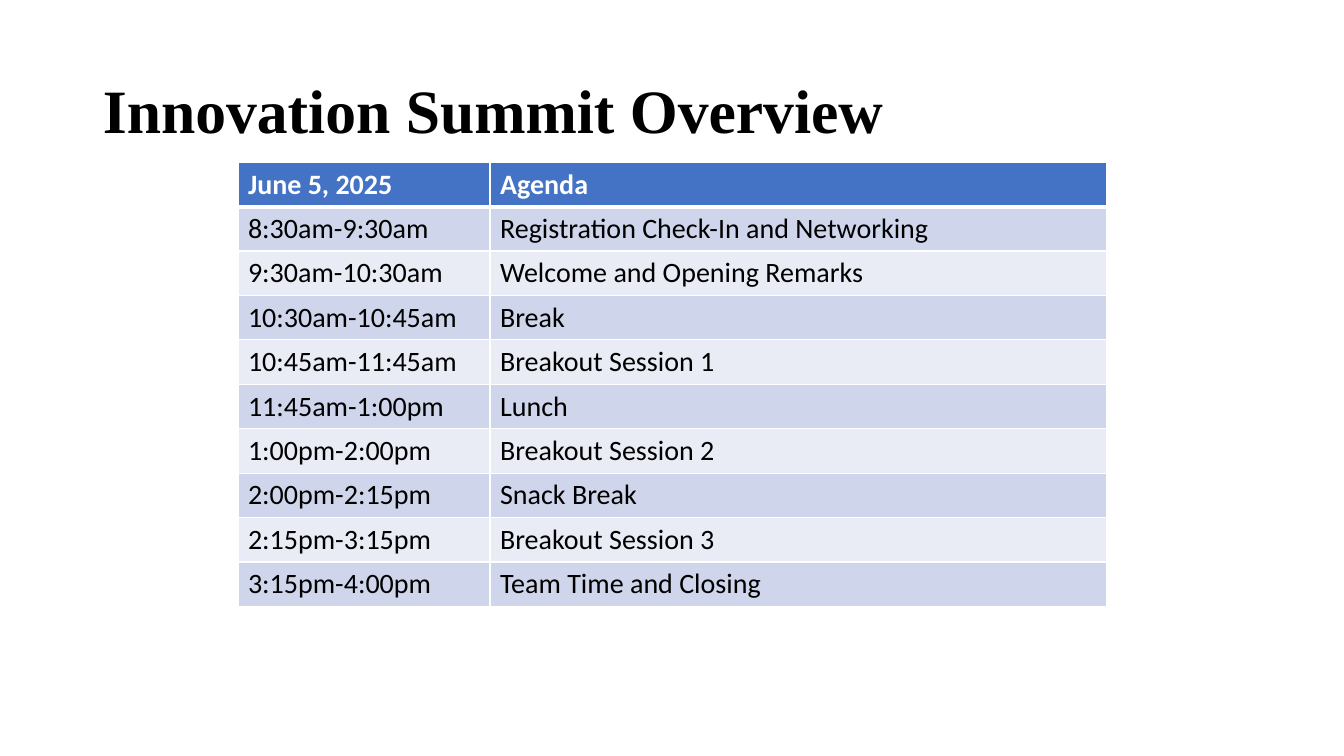
from dataclasses import dataclass

from lxml.etree import SubElement as Sub
from pptx import Presentation
from pptx.dml.color import RGBColor as Rgb
from pptx.enum.text import MSO_ANCHOR as Anchor, MSO_AUTO_SIZE as Fit, PP_ALIGN as Align
from pptx.oxml.ns import qn
from pptx.util import Inches, Pt

TITLE = "Innovation Summit Overview"
HEAD = ("June 5, 2025", "Agenda")
AGENDA = [
    ("8:30am-9:30am", "Registration Check-In and Networking"),
    ("9:30am-10:30am", "Welcome and Opening Remarks"),
    ("10:30am-10:45am", "Break"),
    ("10:45am-11:45am", "Breakout Session 1"),
    ("11:45am-1:00pm", "Lunch"),
    ("1:00pm-2:00pm", "Breakout Session 2"),
    ("2:00pm-2:15pm", "Snack Break"),
    ("2:15pm-3:15pm", "Breakout Session 3"),
    ("3:15pm-4:00pm", "Team Time and Closing"),
]
SIZE = (13.33, 7.5)
BOX = (0.92, 0.4, 11.5, 1.45)
LEFT, TOP = 2.36, 1.61
COLS = (2.5, 6.12)
ROW = 0.44


@dataclass(frozen=True)
class Theme:
    serif: str = "Times New Roman"
    sans: str = "Calibri"
    title: int = 44
    body: int = 20
    ink: str = "000000"
    white: str = "FFFFFF"
    head: str = "4472C4"
    bands: tuple = ("CFD5EA", "E9EBF5")
    thin: int = 1
    thick: int = 3


LOOK = Theme()


def style(para, face, size, color, bold):
    font = para.runs[0].font
    font.name, font.size, font.bold = face, Pt(size), bold
    font.color.rgb = Rgb.from_string(color)


def border(cell, side, width):
    props = cell._tc.get_or_add_tcPr()
    line = Sub(props, qn("a:ln" + side), w=str(Pt(width)))
    fill = Sub(line, qn("a:solidFill"))
    Sub(fill, qn("a:srgbClr"), val=LOOK.white)


def add_title(slide):
    title = slide.shapes.title
    title.left, title.top, title.width, title.height = map(Inches, BOX)
    frame = title.text_frame
    frame.text = TITLE
    frame.auto_size = Fit.NONE
    frame.vertical_anchor = Anchor.MIDDLE
    para = frame.paragraphs[0]
    para.alignment, para.line_spacing = Align.LEFT, 0.9
    style(para, LOOK.serif, LOOK.title, LOOK.ink, True)


def add_agenda(slide):
    rows = [HEAD, *AGENDA]
    area = (LEFT, TOP, sum(COLS), ROW * len(rows))
    table = slide.shapes.add_table(len(rows), len(COLS), *map(Inches, area)).table
    for col, width in zip(table.columns, COLS):
        col.width = Inches(width)
    for r, row in enumerate(rows):
        table.rows[r].height = Inches(ROW)
        top = r == 0
        back = LOOK.head if top else LOOK.bands[(r - 1) % 2]
        for c, text in enumerate(row):
            cell = table.cell(r, c)
            for side in "LRTB":
                heavy = (r, side) in ((0, "B"), (1, "T"))
                border(cell, side, LOOK.thick if heavy else LOOK.thin)
            cell.fill.solid()
            cell.fill.fore_color.rgb = Rgb.from_string(back)
            cell.text_frame.text = text
            ink = LOOK.white if top else LOOK.ink
            style(cell.text_frame.paragraphs[0], LOOK.sans, LOOK.body, ink, top)


def main():
    deck = Presentation()
    deck.slide_width, deck.slide_height = map(Inches, SIZE)
    slide = deck.slides.add_slide(deck.slide_layouts[5])
    add_title(slide)
    add_agenda(slide)
    deck.save("out.pptx")


if __name__ == "__main__":
    main()
